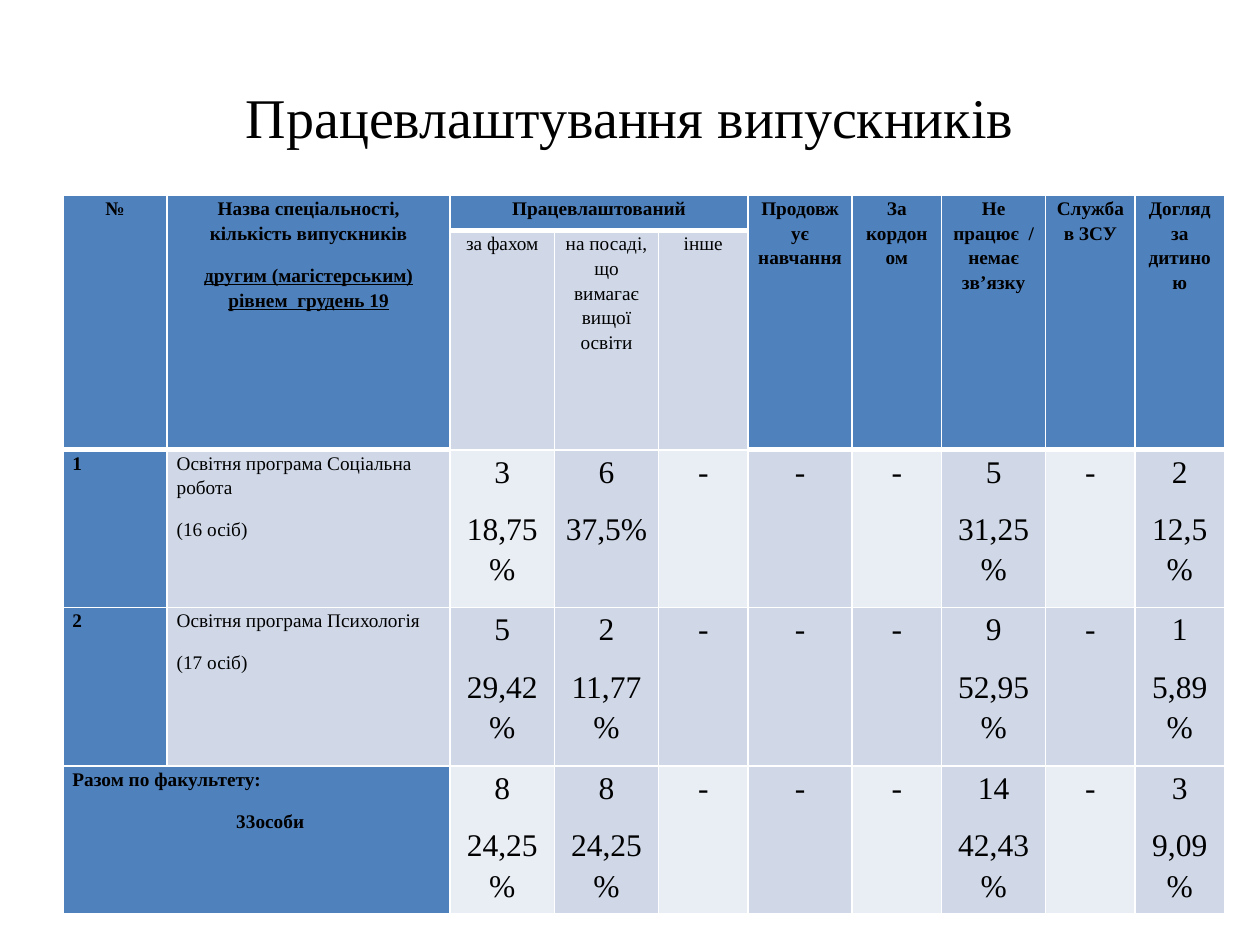
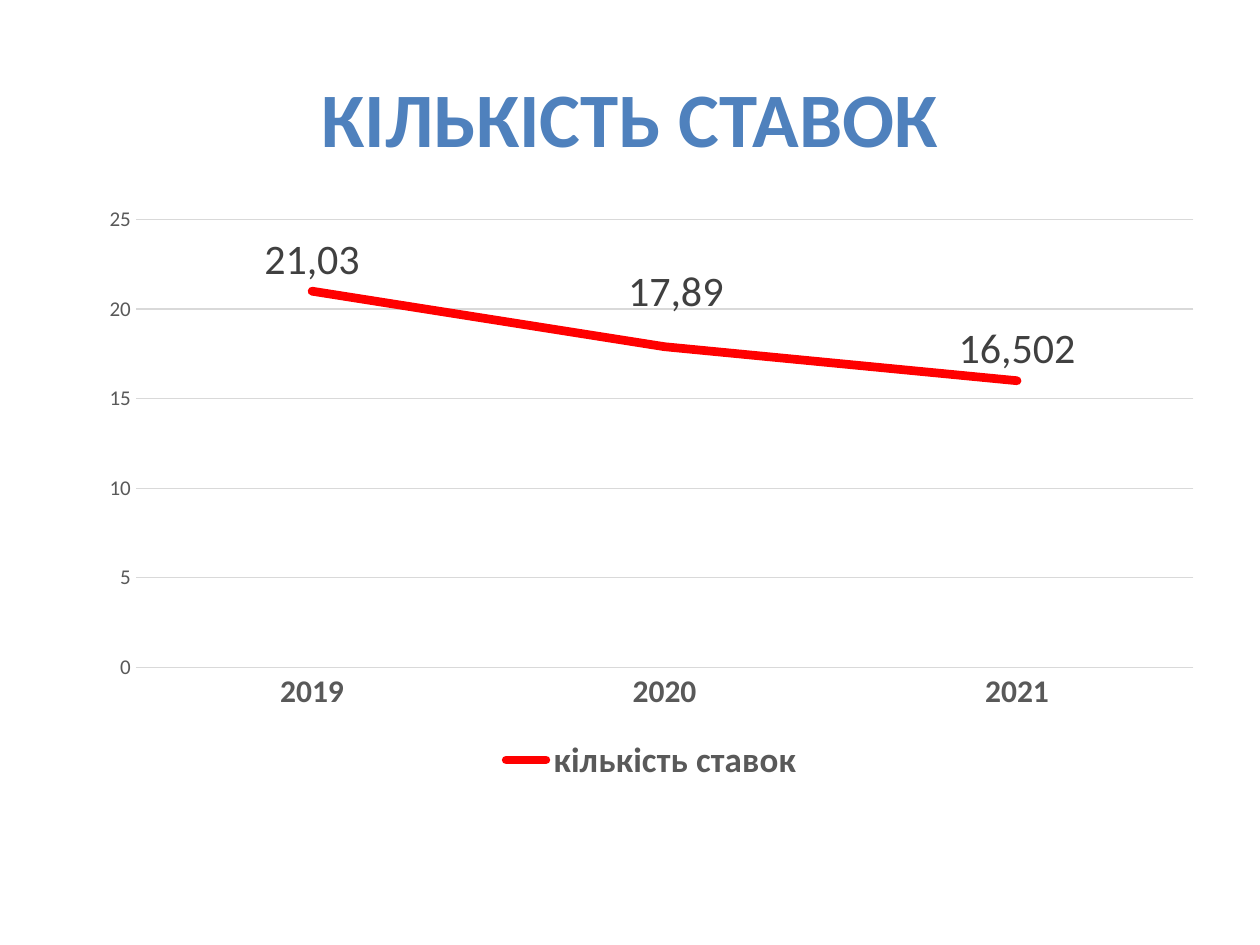
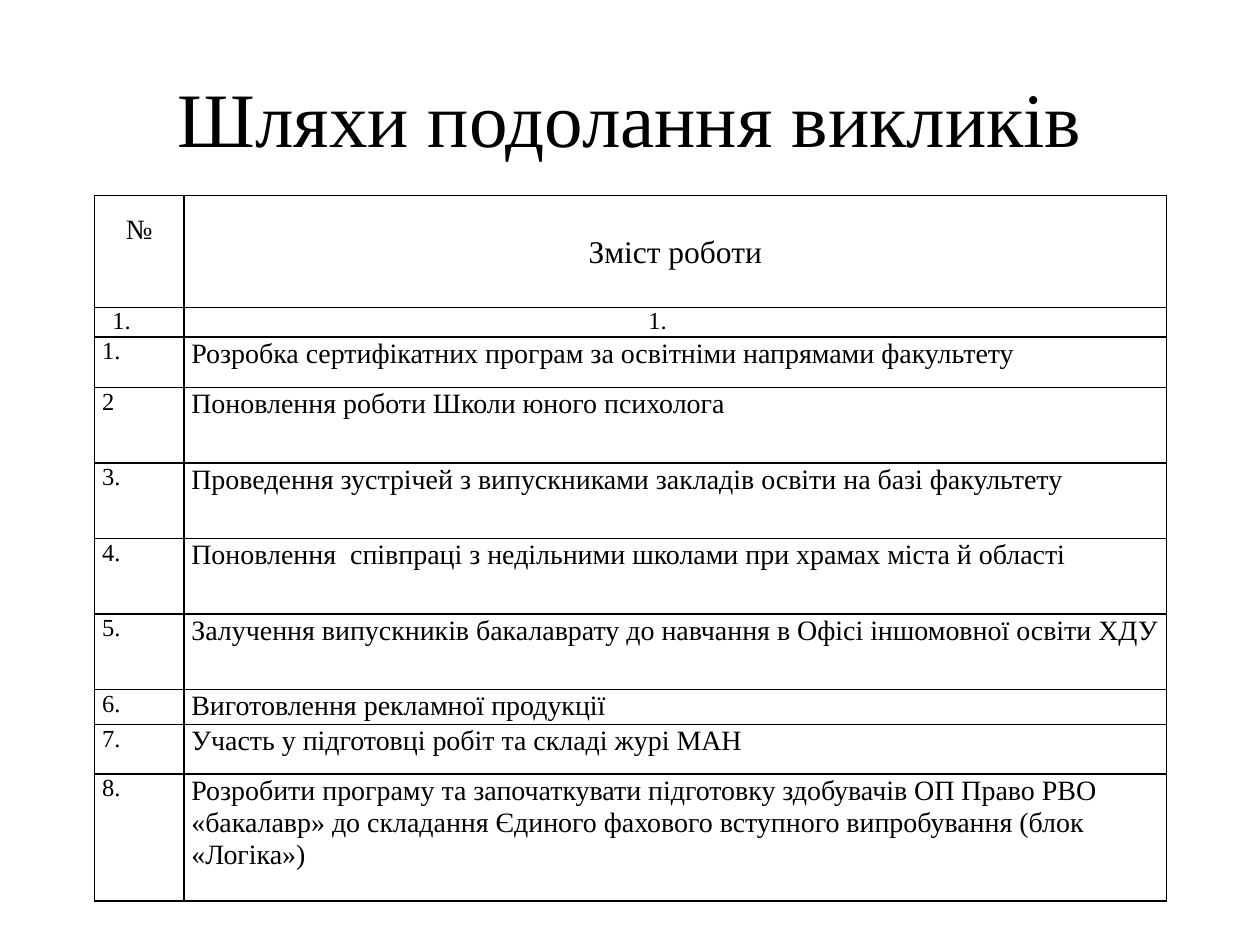
from dataclasses import dataclass

from lxml import etree
from pptx import Presentation
from pptx import util as u
from pptx.chart.data import CategoryChartData
from pptx.dml.color import RGBColor
from pptx.enum import chart as charts, text
from pptx.oxml import ns


@dataclass(frozen=True)
class Theme:
    serif: str = "Times New Roman"
    sans: str = "Calibri"
    black: str = "000000"
    white: str = "FFFFFF"
    blue: str = "4F81BD"
    band: str = "D0D8E8"
    band_light: str = "E9EDF4"
    red: str = "FF0000"
    grey: str = "595959"
    label: str = "404040"
    grid: str = "D9D9D9"
    title: int = 44
    title_small: int = 32
    small: int = 11
    number: int = 14
    body: int = 16
    large: int = 18


THEME = Theme()
WIDTH, HEIGHT = u.Inches(10), u.Inches(7.5)
CONTENT_TOP = u.Inches(1.55)
LEFT, CENTER, JUSTIFY = (text.PP_ALIGN.LEFT, text.PP_ALIGN.CENTER, text.PP_ALIGN.JUSTIFY)
CHART_EXTENSION = "http://schemas.microsoft.com/office/drawing/2012/chart"

# Graduate employment: a line break starts a new paragraph in the cell
EMPLOYMENT_COLUMNS = [7, 19, 7, 7, 6, 7, 6, 7, 6, 6]
EMPLOYMENT_ROWS = [0.28, 1.74, 1.25, 1.26, 1.09]
EMPLOYMENT = [
    ["№", "Назва спеціальності, кількість випускників\nдругим (магістерським) рівнем  грудень 19",
     "Працевлаштований", "", "", "Продовжує навчання", "За кордоном",
     "Не працює  / немає звʼязку", "Служба в ЗСУ", "Догляд за дитиною"],
    ["", "", "за фахом", "на посаді, що вимагає вищої освіти", "інше", "", "", "", "", ""],
    ["1", "Освітня програма Соціальна робота\n(16 осіб)", "3\n18,75%", "6\n37,5%",
     "-", "-", "-", "5\n31,25%", "-", "2\n12,5%"],
    ["2", "Освітня програма Психологія\n(17 осіб)", "5\n29,42%", "2\n11,77%",
     "-", "-", "-", "9\n52,95%", "-", "1\n5,89%"],
    ["Разом по факультету:\n33особи", "", "8\n24,25%", "8\n24,25%",
     "-", "-", "-", "14\n42,43%", "-", "3\n9,09%"],
]
HEADER_ROWS = 2
SPLIT_COLUMNS = range(2, 5)  # columns under the shared employment heading

WORK_COLUMNS = [1, 11]
WORK_ROWS = [0.89, 0.23, 0.4, 0.6, 0.6, 0.6, 0.6, 0.27, 0.39, 1.01]
WORK = [
    ["№", "Зміст роботи"],
    ["1.", "1."],
    ["1.", "Розробка сертифікатних програм за освітніми напрямами факультету"],
    ["2", "Поновлення роботи Школи юного психолога"],
    ["3.", "Проведення зустрічей з випускниками закладів освіти на базі факультету"],
    ["4.", "Поновлення  співпраці з недільними школами при храмах міста й області"],
    ["5.", "Залучення випускників бакалаврату до навчання в Офісі іншомовної освіти ХДУ"],
    ["6.", "Виготовлення рекламної продукції"],
    ["7.", "Участь у підготовці робіт та складі журі МАН"],
    ["8.", "Розробити програму та започаткувати підготовку здобувачів ОП Право РВО "
           "«бакалавр» до складання Єдиного фахового вступного випробування (блок «Логіка»)"],
]


# Shared helpers
def style_font(font, size, color=THEME.black, name=THEME.serif, bold=False):
    font.size, font.name, font.bold = u.Pt(size), name, bold
    font.color.rgb = RGBColor.from_string(color)


def style_line(line, color, width):
    line.color.rgb = RGBColor.from_string(color)
    line.width = u.Pt(width)


def add_slide(presentation, title, **font):
    """Add a blank slide with the centred title that every slide has."""
    slide = presentation.slides.add_slide(presentation.slide_layouts[6])
    shape = slide.shapes.add_textbox(
        int(WIDTH * 0.05), int(HEIGHT * 0.04), int(WIDTH * 0.9), u.Inches(1.25))
    frame = shape.text_frame
    frame.word_wrap = True
    frame.vertical_anchor = text.MSO_ANCHOR.MIDDLE
    frame.text = title
    frame.paragraphs[0].alignment = CENTER
    style_font(frame.paragraphs[0].runs[0].font, **font)
    return slide


def add_table(slide, left, width, columns, rows):
    """Add an unstyled table: columns are weights, rows are inches."""
    table = slide.shapes.add_table(
        len(rows), len(columns), left, CONTENT_TOP, width, u.Inches(sum(rows))).table
    table.first_row = table.horz_banding = False
    for column, weight in zip(table.columns, columns):
        column.width = int(width * weight / sum(columns))
    for row, height in zip(table.rows, rows):
        row.height = u.Inches(height)
    return table


def set_borders(cell, color, top=1, bottom=1):
    properties = cell._tc.get_or_add_tcPr()
    sides = [("lnL", 1), ("lnR", 1), ("lnT", top), ("lnB", bottom)]
    for index, (side, width) in enumerate(sides):
        line = etree.Element(ns.qn(f"a:{side}"), w=str(u.Pt(width)))
        fill = etree.SubElement(line, ns.qn("a:solidFill"))
        etree.SubElement(fill, ns.qn("a:srgbClr"), val=color)
        properties.insert(index, line)


def fill_cell(cell, content, size, alignment, spacing, inset, bold=False):
    cell.margin_left = cell.margin_right = inset
    cell.margin_top = cell.margin_bottom = 0
    cell.text_frame.text = content
    for paragraph in cell.text_frame.paragraphs:
        paragraph.alignment = alignment
        paragraph.line_spacing = spacing
        for run in paragraph.runs:
            style_font(run.font, size, bold=bold)


# Employment table
def employment_fill(row, column):
    split = column in SPLIT_COLUMNS
    if row == 0 or column == 0 or (row < HEADER_ROWS and not split):
        return THEME.blue
    if row == len(EMPLOYMENT) - 1 and column == 1:
        return THEME.blue
    return THEME.band_light if row % 2 == 0 and column % 2 == 0 else THEME.band


def employment_border(row, column):
    """Width of the line below a cell: thick where a heading ends."""
    heading_end = row == 0 or (row == 1 and column not in SPLIT_COLUMNS)
    return 3 if heading_end else 1


def add_employment_table(slide):
    table = add_table(slide, u.Inches(0.5), u.Inches(9.22), EMPLOYMENT_COLUMNS, EMPLOYMENT_ROWS)
    last = len(EMPLOYMENT) - 1
    for row, contents in enumerate(EMPLOYMENT):
        for column, content in enumerate(contents):
            cell = table.cell(row, column)
            fill = employment_fill(row, column)
            figures = row >= HEADER_ROWS and column > 1
            fill_cell(cell, content, THEME.large if figures else THEME.small,
                      CENTER if figures or row < HEADER_ROWS else LEFT,
                      spacing=1.15, inset=u.Pt(5.4), bold=fill == THEME.blue)
            paragraphs = cell.text_frame.paragraphs
            for paragraph in paragraphs:
                paragraph.space_after = u.Pt(10)
            if row == last:
                paragraphs[-1].space_after = u.Pt(4)
            cell.fill.solid()
            cell.fill.fore_color.rgb = RGBColor.from_string(fill)
            set_borders(cell, THEME.white, employment_border(row - 1, column) if row else 1,
                        employment_border(row, column))
    # Merged headings and total
    for column in range(len(EMPLOYMENT_COLUMNS)):
        if column not in SPLIT_COLUMNS:
            table.cell(0, column).merge(table.cell(1, column))
    table.cell(0, SPLIT_COLUMNS[0]).merge(table.cell(0, SPLIT_COLUMNS[-1]))
    table.cell(last, 0).merge(table.cell(last, 1))
    degree = table.cell(0, 1).text_frame.paragraphs[1]
    degree.runs[0].font.underline = True
    total = table.cell(last, 0).text_frame.paragraphs[1]
    total._p.get_or_add_pPr().set("marL", str(u.Inches(1.3)))


# Staff positions chart
def add_positions_chart(slide):
    data = CategoryChartData()
    data.categories = ["2019", "2020", "2021"]
    data.add_series("кількість ставок", [21, 17.9, 16])
    chart = slide.shapes.add_chart(
        charts.XL_CHART_TYPE.LINE_STACKED, u.Inches(0.69), CONTENT_TOP,
        u.Inches(8.96), u.Inches(4.71), data).chart
    chart.has_title = False
    style_font(chart.font, 10, name=THEME.sans)
    chart.has_legend = True
    chart.legend.position = charts.XL_LEGEND_POSITION.BOTTOM
    chart.legend.include_in_layout = False
    style_font(chart.legend.font, 20, THEME.grey, THEME.sans, bold=True)

    years, values = chart.category_axis, chart.value_axis
    for axis in (years, values):
        axis.major_tick_mark = axis.minor_tick_mark = charts.XL_TICK_MARK.NONE
    style_font(years.tick_labels.font, THEME.large, THEME.grey, THEME.sans, bold=True)
    style_line(years.format.line, THEME.grid, 0.75)
    style_font(values.tick_labels.font, 12, THEME.grey, THEME.sans)
    values.format.line.fill.background()
    style_line(values.major_gridlines.format.line, THEME.grid, 0.75)
    values.minimum_scale, values.maximum_scale, values.major_unit = 0, 25, 5

    plot = chart.plots[0]
    plot.vary_by_categories = False
    series = plot.series[0]
    series.smooth = False
    series.marker.style = charts.XL_MARKER_STYLE.NONE
    style_line(series.format.line, THEME.red, 5)
    series.format.line._get_or_add_ln().set("cap", "rnd")
    for index, caption in enumerate(["21,03", "17,89", "16,502"]):
        label = series.points[index].data_label
        label.text_frame.text = caption
        style_font(label.text_frame.paragraphs[0].runs[0].font, 24, THEME.label, THEME.sans)
        label.position = charts.XL_LABEL_POSITION.ABOVE
    shift_label(series.points[1].data_label, 0.01, -0.04)
    hide_leader_lines(series)


def shift_label(label, x, y):
    """Move a data label by shares of the chart's size."""
    layout = etree.Element(ns.qn("c:layout"))
    manual = etree.SubElement(layout, ns.qn("c:manualLayout"))
    for axis, share in (("x", x), ("y", y)):
        etree.SubElement(manual, ns.qn(f"c:{axis}"), val=str(share))
    label._get_or_add_dLbl().find(ns.qn("c:idx")).addnext(layout)


def hide_leader_lines(series):
    labels = series.data_labels._element
    for setting in labels.findall(ns.qn("c:showLeaderLines")):
        setting.set("val", "0")
    extensions = etree.SubElement(labels, ns.qn("c:extLst"))
    extension = etree.SubElement(extensions, ns.qn("c:ext"),
                                 uri="{CE6537A1-D6FC-4f65-9D91-7224C49458BB}")
    etree.SubElement(extension, f"{{{CHART_EXTENSION}}}showLeaderLines",
                     nsmap={"c15": CHART_EXTENSION}, val="0")


# Work plan table
def add_work_table(slide):
    table = add_table(slide, u.Inches(0.75), u.Inches(8.51), WORK_COLUMNS, WORK_ROWS)
    for row, contents in enumerate(WORK):
        for column, content in enumerate(contents):
            cell = table.cell(row, column)
            if row == 0:
                size, alignment = (THEME.body, THEME.large)[column], CENTER
            elif row == 1:
                size, alignment = THEME.number, CENTER
            else:
                size = (THEME.number, THEME.body)[column]
                alignment = (JUSTIFY, LEFT)[column]
            fill_cell(cell, content, size, alignment,
                      spacing=1.0 if row == 1 else 1.04, inset=u.Inches(0.06))
            if row == 0:
                cell.margin_top = u.Inches((0.14, 0.31)[column])
            elif row == 1:
                cell.margin_right = u.Inches(0.34)
            cell.fill.background()
            set_borders(cell, THEME.black)


def main():
    presentation = Presentation()
    presentation.slide_width, presentation.slide_height = WIDTH, HEIGHT
    add_employment_table(
        add_slide(presentation, "Працевлаштування випускників", size=THEME.title_small))
    add_positions_chart(
        add_slide(presentation, "КІЛЬКІСТЬ СТАВОК", size=THEME.title,
                  color=THEME.blue, name=THEME.sans, bold=True))
    add_work_table(
        add_slide(presentation, "Шляхи подолання викликів", size=THEME.title))
    presentation.save("out.pptx")


if __name__ == "__main__":
    main()
